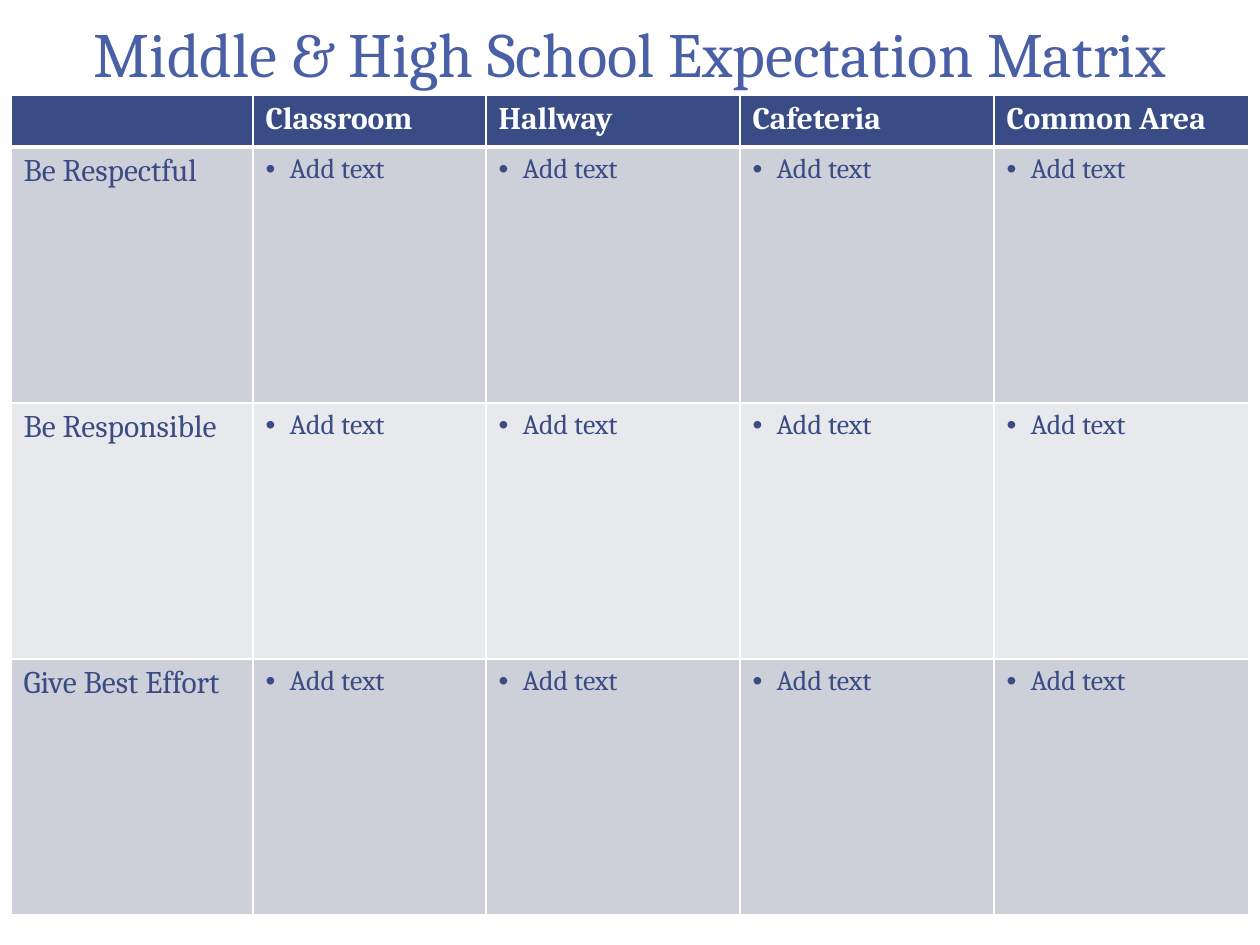
from lxml import etree
from pptx import Presentation
from pptx import util as u
from pptx.dml.color import RGBColor
from pptx.enum import text
from pptx.oxml import ns

PX = 914400 // 126
FONT = "Cambria"
COLORS = {
    "title": "495FA6",
    "navy": "3A4C85",
    "white": "FFFFFF",
    "band_dark": "CED0D9",
    "band_light": "E8E9ED",
}
AREAS = ["Classroom", "Hallway", "Cafeteria", "Common Area"]
EXPECTATIONS = ["Be Respectful", "Be Responsible", "Give Best Effort"]
COL_WIDTHS = [242, 233, 254, 254, 255]
ROW_HEIGHTS = [52, 256, 256, 256]


def px(n):
    return u.Emu(n * PX)


def rgb(name):
    return RGBColor.from_string(COLORS[name])


def style_runs(p, size, color, bold=False):
    for r in p.runs:
        r.font.name = FONT
        r.font.size = u.Pt(size)
        r.font.bold = bold
        r.font.color.rgb = rgb(color)


def add_title(slide, title):
    tf = slide.shapes.add_textbox(px(0), px(10), px(1260), px(84)).text_frame
    tf.word_wrap = True
    tf.vertical_anchor = text.MSO_ANCHOR.MIDDLE
    tf.text = title
    p = tf.paragraphs[0]
    p.alignment = text.PP_ALIGN.CENTER
    style_runs(p, 36, "title")


def add_borders(cell, bottom):
    """Draw white cell borders, 1 pt except for the bottom one."""
    tcPr = cell._tc.get_or_add_tcPr()
    widths = {"lnL": 1, "lnR": 1, "lnT": 1, "lnB": bottom}
    for i, (side, width) in enumerate(widths.items()):
        ln = etree.Element(ns.qn(f"a:{side}"), w=str(u.Pt(width)))
        fill = etree.SubElement(ln, ns.qn("a:solidFill"))
        etree.SubElement(fill, ns.qn("a:srgbClr"), val=COLORS["white"])
        tcPr.insert(i, ln)


def add_bullet(p):
    pPr = p._p.get_or_add_pPr()
    pPr.set("marL", str(px(24)))
    pPr.set("indent", str(px(-24)))
    etree.SubElement(pPr, ns.qn("a:buFont"), typeface="Arial")
    etree.SubElement(pPr, ns.qn("a:buChar"), char="•")


def fill_cell(cell, words, fill, size, color, bold=False, bullet=False, bottom=1):
    cell.fill.solid()
    cell.fill.fore_color.rgb = rgb(fill)
    add_borders(cell, bottom)
    cell.text = words
    p = cell.text_frame.paragraphs[0]
    if bullet:
        add_bullet(p)
    style_runs(p, size, color, bold)


def add_matrix(slide):
    table = slide.shapes.add_table(
        len(ROW_HEIGHTS), len(COL_WIDTHS), px(11), px(95),
        px(sum(COL_WIDTHS)), px(sum(ROW_HEIGHTS))).table
    for col, width in zip(table.columns, COL_WIDTHS):
        col.width = px(width)
    for row, height in zip(table.rows, ROW_HEIGHTS):
        row.height = px(height)

    for c, area in enumerate([""] + AREAS):
        fill_cell(table.cell(0, c), area, "navy", 18, "white", bold=True, bottom=3)
    for i, expectation in enumerate(EXPECTATIONS, 1):
        band = "band_dark" if i % 2 else "band_light"
        fill_cell(table.cell(i, 0), expectation, band, 18, "navy")
        for c in range(1, len(COL_WIDTHS)):
            fill_cell(table.cell(i, c), "Add text", band, 16, "navy", bullet=True)


def main():
    prs = Presentation()
    prs.slide_width, prs.slide_height = u.Inches(10), u.Inches(7.5)
    slide = prs.slides.add_slide(prs.slide_layouts[6])
    add_title(slide, "Middle & High School Expectation Matrix")
    add_matrix(slide)
    prs.save("out.pptx")


if __name__ == "__main__":
    main()
